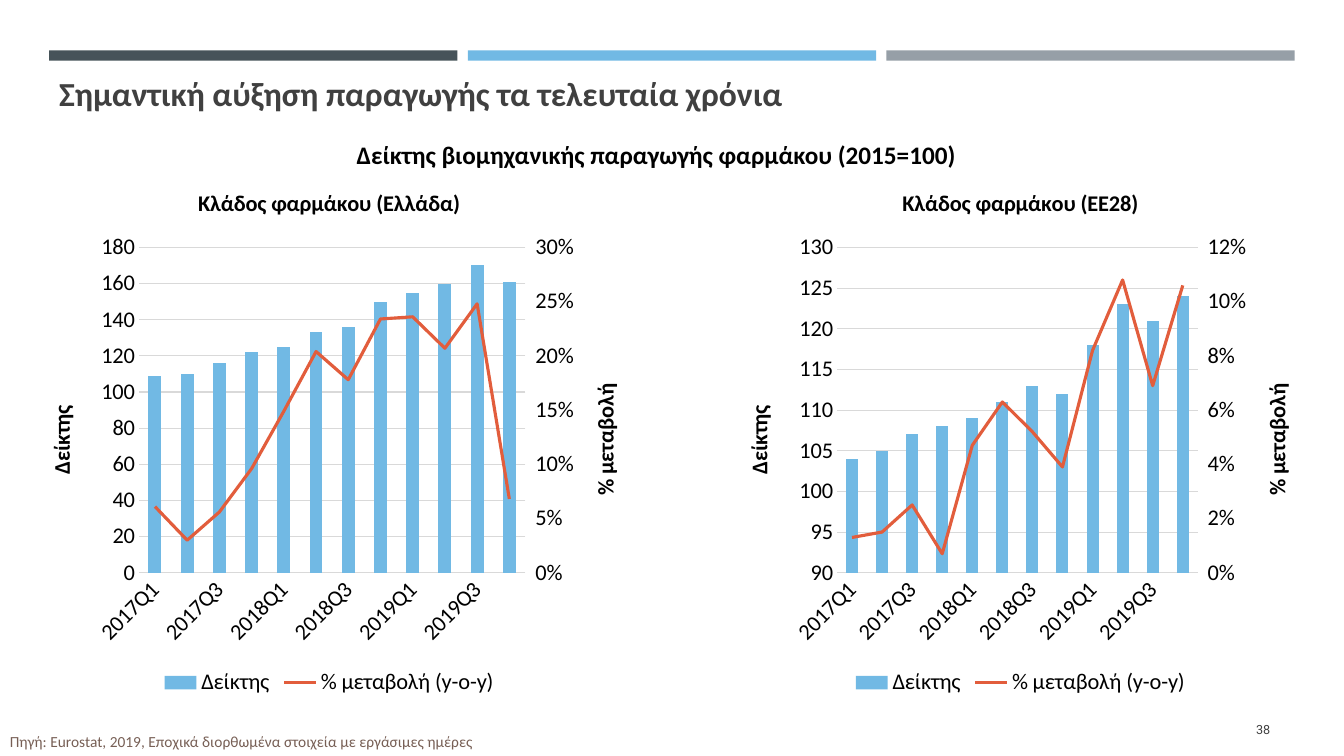
from copy import deepcopy

from lxml import etree
from pptx import Presentation
from pptx.chart.axis import ValueAxis
from pptx.chart.data import CategoryChartData
from pptx.dml.color import RGBColor
from pptx.enum.chart import XL_CHART_TYPE, XL_LEGEND_POSITION, XL_MARKER_STYLE, XL_TICK_MARK
from pptx.enum.shapes import MSO_SHAPE
from pptx.enum.text import MSO_ANCHOR, PP_ALIGN
from pptx.oxml import parse_xml
from pptx.oxml.ns import qn
from pptx.util import Cm, Pt

COLUMNS = XL_CHART_TYPE.COLUMN_CLUSTERED
LEGEND_BOTTOM = XL_LEGEND_POSITION.BOTTOM
NO_MARKER = XL_MARKER_STYLE.NONE
TICK_NONE, TICK_OUT = XL_TICK_MARK.NONE, XL_TICK_MARK.OUTSIDE
RECTANGLE = MSO_SHAPE.RECTANGLE
TOP, MIDDLE, BOTTOM = MSO_ANCHOR.TOP, MSO_ANCHOR.MIDDLE, MSO_ANCHOR.BOTTOM
LEFT, RIGHT, JUSTIFY = PP_ALIGN.LEFT, PP_ALIGN.RIGHT, PP_ALIGN.JUSTIFY

COLORS = {
    "slate": "465359", "index": "71B9E4", "grey": "969FA7", "change": "E25D3C",
    "heading": "404040", "source": "775F55", "text": "000000", "grid": "D9D9D9",
}
CHART_NS = "http://schemas.openxmlformats.org/drawingml/2006/chart"
QUARTERS = [f"{year}Q{quarter}" for year in (2017, 2018, 2019) for quarter in (1, 2, 3, 4)]
GREECE = {
    "title": "Κλάδος φαρμάκου (Ελλάδα)",
    "index": [109, 110, 116, 122, 125, 133, 136, 150, 155, 160, 170, 161],
    "change": [0.061, 0.03, 0.056, 0.096, 0.149, 0.204, 0.178, 0.234, 0.236, 0.207, 0.248, 0.068],
    "index_scale": (0, 180, 20), "change_scale": (0, 0.3, 0.05), "plot_width": 0.63,
}
EU28 = {
    "title": "Κλάδος φαρμάκου (ΕΕ28)",
    "index": [104, 105, 107, 108, 109, 111, 113, 112, 118, 123, 121, 124],
    "change": [0.013, 0.015, 0.025, 0.007, 0.047, 0.063, 0.052, 0.039, 0.082, 0.108, 0.069, 0.106],
    "index_scale": (90, 130, 5), "change_scale": (0, 0.12, 0.02), "plot_width": 0.61,
}


def rgb(name):
    return RGBColor.from_string(COLORS[name])


def style_font(font, size, color, bold=False, face="Calibri"):
    font.name, font.size, font.bold = face, Pt(size), bold
    font.color.rgb = rgb(color)


def add_label(slide, box, text, size, color, bold=False, face="Calibri",
              align=LEFT, anchor=TOP, wrap=True):
    frame = slide.shapes.add_textbox(*map(Cm, box)).text_frame
    frame.word_wrap, frame.vertical_anchor = wrap, anchor
    paragraph = frame.paragraphs[0]
    paragraph.alignment = align
    run = paragraph.add_run()
    run.text = text
    style_font(run.font, size, color, bold, face)
    return paragraph


def add_top_bands(slide, left, top, width, height):
    gap = 0.26
    band_width = (width - 2 * gap) / 3
    for column, color in enumerate(("slate", "index", "grey")):
        band = slide.shapes.add_shape(
            RECTANGLE, Cm(left + column * (band_width + gap)), Cm(top), Cm(band_width), Cm(height))
        band.shadow.inherit = False
        band.fill.solid()
        band.fill.fore_color.rgb = rgb(color)
        band.line.fill.background()


def write_title(title_frame, text):
    run = title_frame.paragraphs[0].add_run()
    run.text = text
    style_font(run.font, 16, "text", True)


def set_scale(axis, scale, number_format):
    axis.minimum_scale, axis.maximum_scale, axis.major_unit = scale
    axis.tick_labels.number_format = number_format
    axis.tick_labels.number_format_is_linked = False


def style_axes(chart, scale):
    quarters, index = chart.category_axis, chart.value_axis
    quarters.major_tick_mark = index.major_tick_mark = TICK_NONE
    quarters.format.line.color.rgb = rgb("grid")
    quarters.format.line.width = Pt(0.75)
    style_font(quarters.tick_labels.font, 16, "text")
    index.format.line.fill.background()
    index.major_gridlines.format.line.color.rgb = rgb("grid")
    index.major_gridlines.format.line.width = Pt(0.75)
    style_font(index.tick_labels.font, 16, "text")
    set_scale(index, scale, "#,##0")
    write_title(index.axis_title.text_frame, "Δείκτης")


def move_change_to_right_axis(chart, scale):
    plot_area = chart._chartSpace.find(".//" + qn("c:plotArea"))
    quarters, index = plot_area.find(qn("c:catAx")), plot_area.find(qn("c:valAx"))
    quarters.find(qn("c:txPr")).find(qn("a:bodyPr")).set("rot", "-2700000")
    skip = etree.Element(qn("c:tickLblSkip"), val="2")
    quarters.find(qn("c:noMultiLvlLbl")).addprevious(skip)
    title_body = index.find(qn("c:title")).find(".//" + qn("a:bodyPr"))
    title_body.set("rot", "-5400000")
    title_body.set("vert", "horz")

    columns = plot_area.find(qn("c:barChart"))
    change = columns.findall(qn("c:ser"))[1]
    for column_flag in change.findall(qn("c:invertIfNegative")):
        change.remove(column_flag)
    lines = parse_xml(
        f'<c:lineChart xmlns:c="{CHART_NS}"><c:grouping val="standard"/><c:varyColors val="0"/>'
        '<c:marker val="1"/><c:axId val="5001"/><c:axId val="5002"/></c:lineChart>')
    lines.insert(2, change)
    columns.addnext(lines)

    hidden_quarters, right = deepcopy(quarters), deepcopy(index)
    for axis, own_id, cross_id in ((hidden_quarters, "5001", "5002"), (right, "5002", "5001")):
        axis.find(qn("c:axId")).set("val", own_id)
        axis.find(qn("c:crossAx")).set("val", cross_id)
    hidden_quarters.find(qn("c:delete")).set("val", "1")
    right.find(qn("c:axPos")).set("val", "r")
    right.find(qn("c:crosses")).set("val", "max")
    index.addnext(right)
    right.addnext(hidden_quarters)

    change_axis = ValueAxis(right)
    change_axis.has_major_gridlines = False
    change_axis.major_tick_mark = TICK_OUT
    set_scale(change_axis, scale, "0%")
    change_axis.axis_title.text_frame.paragraphs[0].runs[0].text = "% μεταβολή"


def set_plot_layout(chart, x, y, width, height):
    plot_area = chart._chartSpace.find(".//" + qn("c:plotArea"))
    for layout in plot_area.findall(qn("c:layout")):
        plot_area.remove(layout)
    layout = etree.Element(qn("c:layout"))
    manual = etree.SubElement(layout, qn("c:manualLayout"))
    settings = (("layoutTarget", "inner"), ("xMode", "edge"), ("yMode", "edge"),
                ("x", x), ("y", y), ("w", width), ("h", height))
    for tag, value in settings:
        etree.SubElement(manual, qn("c:" + tag), val=str(value))
    plot_area.insert(0, layout)


def add_production_chart(slide, box, region):
    data = CategoryChartData()
    data.categories = QUARTERS
    data.add_series("Δείκτης", region["index"], "#,##0")
    data.add_series("% μεταβολή (y-o-y)", region["change"], "0.0%")
    chart = slide.shapes.add_chart(COLUMNS, *map(Cm, box), data).chart
    style_font(chart.font, 16, "text")
    chart.has_title = True
    write_title(chart.chart_title.text_frame, region["title"])
    chart.has_legend = True
    chart.legend.position = LEGEND_BOTTOM
    chart.legend.include_in_layout = False
    style_font(chart.legend.font, 16, "text")
    style_axes(chart, region["index_scale"])
    move_change_to_right_axis(chart, region["change_scale"])
    set_plot_layout(chart, 0.19, 0.15, region["plot_width"], 0.61)

    columns, lines = chart.plots
    columns.gap_width = 150
    columns.vary_by_categories = False
    index, change = columns.series[0], lines.series[0]
    index.format.fill.solid()
    index.format.fill.fore_color.rgb = rgb("index")
    change.format.line.color.rgb = rgb("change")
    change.format.line.width = Pt(2.25)
    change.marker.style = NO_MARKER
    change.smooth = False


def add_footer(slide, left, top, width, height):
    source = add_label(
        slide, (left, top + 0.43, 13.44, height - 0.43),
        "Πηγή: Eurostat, 2019, Εποχικά διορθωμένα στοιχεία με εργάσιμες ημέρες",
        11, "source", align=JUSTIFY)
    source.line_spacing, source.space_after = 1.07, Pt(8)
    add_label(slide, (left + width - 2.92, top, 2.92, 1.02), "38", 9, "heading",
              face="Roboto", align=RIGHT, anchor=MIDDLE)


def main():
    deck = Presentation()
    deck.slide_width, deck.slide_height = Cm(33.87), Cm(19.05)
    slide = deck.slides.add_slide(deck.slide_layouts[6])
    add_top_bands(slide, 1.24, 1.27, 31.39, 0.26)
    add_label(slide, (1.24, 1.57, 31.45, 1.4), "Σημαντική αύξηση παραγωγής τα τελευταία χρόνια",
              24, "heading", bold=True, anchor=BOTTOM)
    add_footer(slide, 0, 17.86, 32.26, 1.19)
    add_production_chart(slide, (0.56, 4.22, 15.47, 13.44), GREECE)
    add_production_chart(slide, (18.26, 4.22, 14.91, 13.44), EU28)
    add_label(slide, (8.74, 3.38, 16.41, 1.02),
              "Δείκτης βιομηχανικής παραγωγής φαρμάκου (2015=100)",
              18, "text", bold=True, wrap=False)
    deck.save("out.pptx")


if __name__ == "__main__":
    main()
